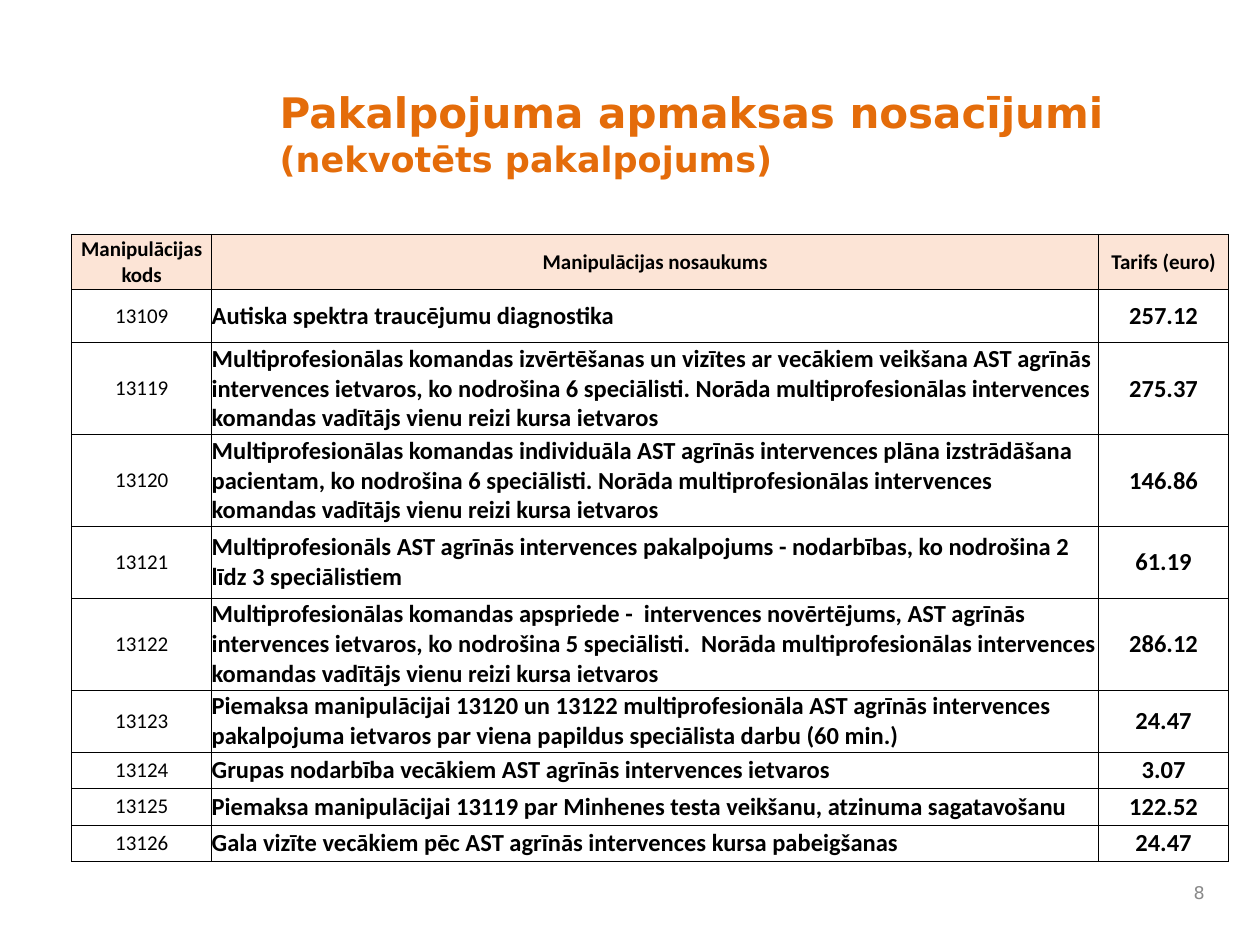
from dataclasses import dataclass

from lxml import etree
from pptx import Presentation
from pptx.dml.color import RGBColor
from pptx.enum.text import MSO_ANCHOR, MSO_AUTO_SIZE, PP_ALIGN
from pptx.oxml.ns import qn
from pptx.util import Inches, Pt

LEFT, CENTER, RIGHT = PP_ALIGN.LEFT, PP_ALIGN.CENTER, PP_ALIGN.RIGHT
TOP, MIDDLE = MSO_ANCHOR.TOP, MSO_ANCHOR.MIDDLE
NO_AUTOFIT = MSO_AUTO_SIZE.NONE
TITLE_ONLY = 5
GRID_COLUMNS, GRID_ROWS = 100, 75


@dataclass(frozen=True)
class Theme:
    """Colours, fonts and type sizes of the deck."""
    accent: str = "E46C0A"
    ink: str = "000000"
    muted: str = "898989"
    header_fill: str = "FCE4D6"
    heading_font: str = "DejaVu Sans"
    table_font: str = "Calibri"
    title_size: int = 24
    subtitle_size: int = 20
    body_size: int = 14
    label_size: int = 12
    number_size: int = 10
    border_width: float = 0.5


class SlideBuilder:
    """Places styled elements on the current page by grid units."""

    def __init__(self, deck, theme):
        """Open a title-only page in the deck."""
        self.theme = theme
        self.column = deck.slide_width / GRID_COLUMNS
        self.row = deck.slide_height / GRID_ROWS
        self.page = deck.slides.add_slide(deck.slide_layouts[TITLE_ONLY])

    def area(self, left, top, width, height):
        """Turn grid units into slide lengths."""
        return (round(left * self.column), round(top * self.row),
                round(width * self.column), round(height * self.row))

    def span(self, para, text, size, color, font, bold=False):
        """Add one formatted run to a paragraph."""
        run = para.add_run()
        run.text = text
        run.font.size, run.font.bold, run.font.name = Pt(size), bold, font
        run.font.color.rgb = RGBColor.from_string(color)

    def title(self, heading, detail, *place):
        """Fill the title placeholder with a heading and a smaller detail."""
        box = self.page.shapes.title
        box.left, box.top, box.width, box.height = self.area(*place)
        frame = box.text_frame
        frame.word_wrap, frame.auto_size = True, NO_AUTOFIT
        frame.vertical_anchor = TOP
        para = frame.paragraphs[0]
        para.alignment = LEFT
        for text, size in ((heading, self.theme.title_size),
                           (detail, self.theme.subtitle_size)):
            self.span(para, text, size, self.theme.accent, self.theme.heading_font, True)

    def page_number(self, number, *place):
        """Add the right-aligned page number."""
        frame = self.page.shapes.add_textbox(*self.area(*place)).text_frame
        frame.word_wrap, frame.vertical_anchor = True, MIDDLE
        para = frame.paragraphs[0]
        para.alignment = RIGHT
        self.span(para, number, self.theme.number_size, self.theme.muted,
                  self.theme.heading_font)

    def borders(self, cell):
        """Draw a thin line on all four sides of a cell."""
        properties = cell._tc.get_or_add_tcPr()
        for side in ("a:lnL", "a:lnR", "a:lnT", "a:lnB"):
            line = etree.SubElement(properties, qn(side), w=str(Pt(self.theme.border_width)))
            fill = etree.SubElement(line, qn("a:solidFill"))
            etree.SubElement(fill, qn("a:srgbClr"), val=self.theme.ink)

    def cell(self, cell, text, size, bold, alignment, fill=None):
        """Format one table cell and write its text."""
        self.borders(cell)
        cell.margin_left = cell.margin_right = cell.margin_top = cell.margin_bottom = 0
        cell.vertical_anchor = MIDDLE
        if fill:
            cell.fill.solid()
            cell.fill.fore_color.rgb = RGBColor.from_string(fill)
        else:
            cell.fill.background()
        para = cell.text_frame.paragraphs[0]
        para.alignment = alignment
        self.span(para, text, size, self.theme.ink, self.theme.table_font, bold)

    def table(self, header, records, left, top, widths, heights):
        """Add the tariff table with a tinted header row."""
        theme = self.theme
        place = self.area(left, top, sum(widths), sum(heights))
        table = self.page.shapes.add_table(len(heights), len(widths), *place).table
        table.first_row = table.horz_banding = False
        for column, width in zip(table.columns, widths):
            column.width = round(width * self.column)
        for row, height in zip(table.rows, heights):
            row.height = round(height * self.row)
        for index, text in enumerate(header):
            self.cell(table.cell(0, index), text, theme.label_size, True, CENTER,
                      theme.header_fill)
        styles = ((theme.label_size, False, CENTER),
                  (theme.body_size, True, LEFT),
                  (theme.body_size, True, CENTER))
        for row, record in enumerate(records, 1):
            for index, (text, style) in enumerate(zip(record, styles)):
                self.cell(table.cell(row, index), text, *style)


HEADER = ("Manipulācijas kods", "Manipulācijas nosaukums", "Tarifs (euro)")
TARIFFS = (
    ("13109", "Autiska spektra traucējumu diagnostika", "257.12"),
    ("13119", "Multiprofesionālas komandas izvērtēšanas un vizītes ar vecākiem veikšana "
     "AST agrīnās intervences ietvaros, ko nodrošina 6 speciālisti. Norāda "
     "multiprofesionālas intervences komandas vadītājs vienu reizi kursa ietvaros", "275.37"),
    ("13120", "Multiprofesionālas komandas individuāla AST agrīnās intervences plāna "
     "izstrādāšana pacientam, ko nodrošina 6 speciālisti. Norāda "
     "multiprofesionālas intervences komandas vadītājs vienu reizi kursa ietvaros", "146.86"),
    ("13121", "Multiprofesionāls AST agrīnās intervences pakalpojums - nodarbības, "
     "ko nodrošina 2 līdz 3 speciālistiem", "61.19"),
    ("13122", "Multiprofesionālas komandas apspriede -  intervences novērtējums, "
     "AST agrīnās intervences ietvaros, ko nodrošina 5 speciālisti.  Norāda "
     "multiprofesionālas intervences komandas vadītājs vienu reizi kursa ietvaros", "286.12"),
    ("13123", "Piemaksa manipulācijai 13120 un 13122 multiprofesionāla AST agrīnās "
     "intervences pakalpojuma ietvaros par viena papildus speciālista darbu (60 min.)",
     "24.47"),
    ("13124", "Grupas nodarbība vecākiem AST agrīnās intervences ietvaros", "3.07"),
    ("13125", "Piemaksa manipulācijai 13119 par Minhenes testa veikšanu, "
     "atzinuma sagatavošanu", "122.52"),
    ("13126", "Gala vizīte vecākiem pēc AST agrīnās intervences kursa pabeigšanas", "24.47"),
)
COLUMN_WIDTHS = (11.1, 70.4, 10.3)
ROW_HEIGHTS = (4.4, 4.2, 7.3, 7.3, 5.7, 7.3, 4.9, 2.9, 2.9, 2.9)


def main():
    """Build the tariff page and save the deck."""
    deck = Presentation()
    deck.slide_width, deck.slide_height = Inches(10), Inches(7.5)
    builder = SlideBuilder(deck, Theme())
    builder.title("Pakalpojuma apmaksas nosacījumi ", "(nekvotēts pakalpojums)",
                  21.2, 6.4, 72.1, 11.3)
    builder.table(HEADER, TARIFFS, 5.7, 18.6, COLUMN_WIDTHS, ROW_HEIGHTS)
    builder.page_number("8", 93.3, 69.2, 3.3, 3.3)
    deck.save("out.pptx")


if __name__ == "__main__":
    main()
